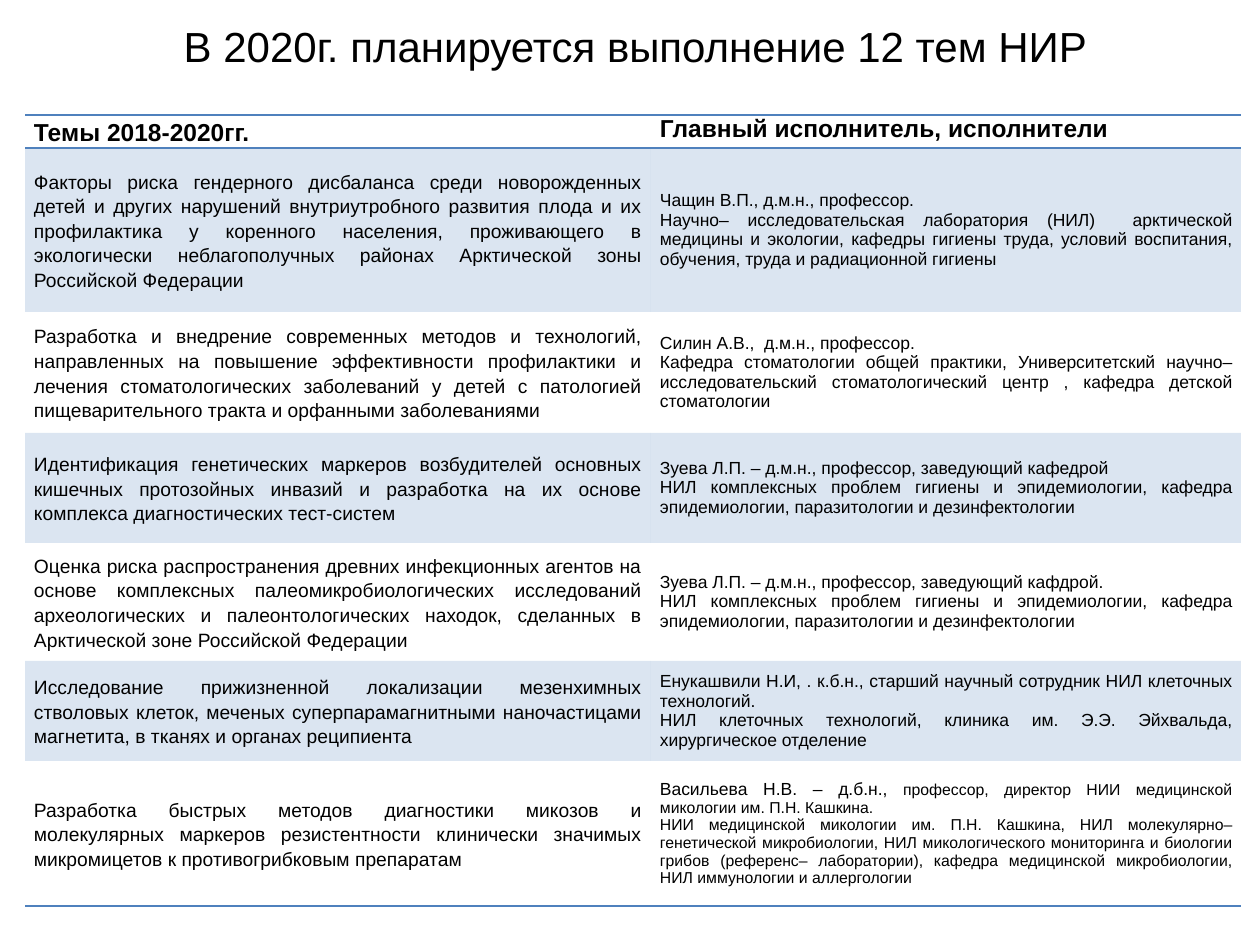
from lxml import etree
from pptx import Presentation
from pptx.dml.color import RGBColor
from pptx.enum.text import MSO_ANCHOR, PP_ALIGN
from pptx.oxml.ns import qn
from pptx.util import Emu, Pt

MID, TOP = MSO_ANCHOR.MIDDLE, MSO_ANCHOR.TOP
CENTER, JUST = PP_ALIGN.CENTER, PP_ALIGN.JUSTIFY
SCALE = 914400 / 126
COLORS = {"ink": "000000", "blue": "4F81BD"}
PLAIN = "{2D5ABB26-0587-4C30-8999-92F81FD0307C}"
COLS = [626, 590]
HEIGHTS = [33, 164, 121, 110, 118, 100, 145]
PAD = {"margin_left": 9, "margin_right": 9, "margin_top": 0, "margin_bottom": 0}
LEFT = {"alignment": JUST, "line_spacing": 1.15}
RIGHT = {"alignment": JUST}

TITLE = "В 2020г. планируется выполнение 12 тем НИР"
HEADS = ["Темы 2018-2020гг.", "Главный исполнитель, исполнители"]
UNIT = ("НИЛ комплексных проблем гигиены и эпидемиологии, кафедра эпидемиологии, "
        "паразитологии и дезинфектологии")
TOPICS = [
    ("Факторы риска гендерного дисбаланса среди новорожденных детей и других нарушений "
     "внутриутробного развития плода и их профилактика у коренного населения, проживающего "
     "в экологически неблагополучных районах Арктической зоны Российской Федерации",
     [[("Чащин В.П., д.м.н., профессор. ", 10)],
      [("Научно– исследовательская лаборатория (НИЛ)  арктической медицины и экологии, "
        "кафедры гигиены труда, условий воспитания, обучения, труда и радиационной гигиены", 10)]]),
    ("Разработка и внедрение современных методов и технологий, направленных на повышение "
     "эффективности профилактики и лечения стоматологических заболеваний у детей с патологией "
     "пищеварительного тракта и орфанными заболеваниями ",
     [[("Силин А.В.,  д.м.н., профессор.", 10)],
      [("Кафедра стоматологии общей практики, Университетский научно– исследовательский "
        "стоматологический центр , кафедра детской стоматологии ", 10)]]),
    ("Идентификация генетических маркеров возбудителей основных кишечных протозойных инвазий "
     "и разработка на их основе комплекса диагностических тест-систем ",
     [[("Зуева Л.П. – д.м.н., профессор, заведующий кафедрой", 10)], [(UNIT, 10)]]),
    ("Оценка риска распространения древних инфекционных агентов на основе комплексных "
     "палеомикробиологических исследований археологических и палеонтологических находок, "
     "сделанных в Арктической зоне Российской Федерации",
     [[("Зуева Л.П. – д.м.н., профессор, заведующий кафдрой. ", 10)], [(UNIT, 10)]]),
    ("Исследование прижизненной локализации мезенхимных стволовых клеток, меченых "
     "суперпарамагнитными наночастицами магнетита, в тканях и органах реципиента",
     [[("Енукашвили Н.И, . к.б.н., старший научный сотрудник НИЛ клеточных технологий. ", 10)],
      [("НИЛ клеточных технологий, клиника им. Э.Э. Эйхвальда, хирургическое отделение", 10)]]),
    ("Разработка быстрых методов диагностики микозов и молекулярных маркеров резистентности "
     "клинически значимых микромицетов к противогрибковым препаратам ",
     [[("Васильева Н.В. – д.б.н., ", 10),
       ("профессор, директор НИИ медицинской микологии им. П.Н. Кашкина. ", 9)],
      [("НИИ медицинской микологии им. П.Н. Кашкина, НИЛ молекулярно– генетической "
        "микробиологии, НИЛ микологического мониторинга и биологии грибов (референс– "
        "лаборатории), кафедра медицинской микробиологии, НИЛ иммунологии и аллергологии", 9)]]),
]


def px(num):
    """Turn px into EMU."""
    return Emu(round(num * SCALE))


def apply(item, form):
    """Set each attribute named in a format dict."""
    for key, val in form.items():
        setattr(item, key, val)


def write(frame, paras, form, bold=False):
    """Fill a text frame with paragraphs of (text, size) runs."""
    for idx, runs in enumerate(paras):
        para = frame.add_paragraph() if idx else frame.paragraphs[0]
        apply(para, form)
        for text, size in runs:
            run = para.add_run()
            run.text = text
            apply(run.font, {"size": Pt(size), "name": "Arial", "bold": bold})
            run.font.color.rgb = RGBColor.from_string(COLORS["ink"])


def rule(cell, side, slot):
    """Draw a blue line on one side of a cell."""
    line = etree.Element(qn("a:" + side), w=str(Pt(1)))
    fill = etree.SubElement(line, qn("a:solidFill"))
    etree.SubElement(fill, qn("a:srgbClr"), val=COLORS["blue"])
    cell._tc.get_or_add_tcPr().insert(slot, line)


def shade(cell):
    """Fill a cell with see-through blue."""
    cell.fill.solid()
    cell.fill.fore_color.rgb = RGBColor.from_string(COLORS["blue"])
    tint = cell._tc.tcPr.find(".//" + qn("a:srgbClr"))
    etree.SubElement(tint, qn("a:alpha"), val="20000")


def add_title(slide, box):
    """Place the slide title in its box."""
    title = slide.shapes.title
    apply(title, dict(zip(("left", "top", "width", "height"), map(px, box))))
    apply(title.text_frame, {"vertical_anchor": MID, "word_wrap": True})
    write(title.text_frame, [[(TITLE, 24)]], {"alignment": CENTER})


def add_grid(slide, box):
    """Place the table of topics and people in its box."""
    table = slide.shapes.add_table(len(HEIGHTS), len(COLS), *map(px, box)).table
    apply(table, {"first_row": False, "horz_banding": False})
    table._tbl.tblPr.find(qn("a:tableStyleId")).text = PLAIN
    for col, wide in zip(table.columns, COLS):
        col.width = px(wide)
    for row, high in zip(table.rows, HEIGHTS):
        row.height = px(high)
    heads = [[[(text, 14)]] for text in HEADS]
    rows = [heads] + [[[[(topic, 11)]], people] for topic, people in TOPICS]
    for num, row in enumerate(rows):
        forms = [LEFT | {"space_after": Pt(12 if num else 6)}, RIGHT]
        for idx, paras in enumerate(row):
            cell = table.cell(num, idx)
            apply(cell, {key: px(val) for key, val in PAD.items()})
            cell.vertical_anchor = MID if num else TOP
            write(cell.text_frame, paras, forms[idx], bold=num == 0)
            if num % 2:
                shade(cell)
            else:
                cell.fill.background()
            if num in (0, len(rows) - 1):
                rule(cell, "lnB", 0)
            if num == 0:
                rule(cell, "lnT", 0)


def main():
    """Build and save the slide."""
    deck = Presentation()
    apply(deck, {"slide_width": px(1260), "slide_height": px(945)})
    slide = deck.slides.add_slide(deck.slide_layouts[5])
    add_title(slide, (64, 17, 1143, 58))
    add_grid(slide, (25, 115, sum(COLS), sum(HEIGHTS)))
    deck.save("out.pptx")


if __name__ == "__main__":
    main()
